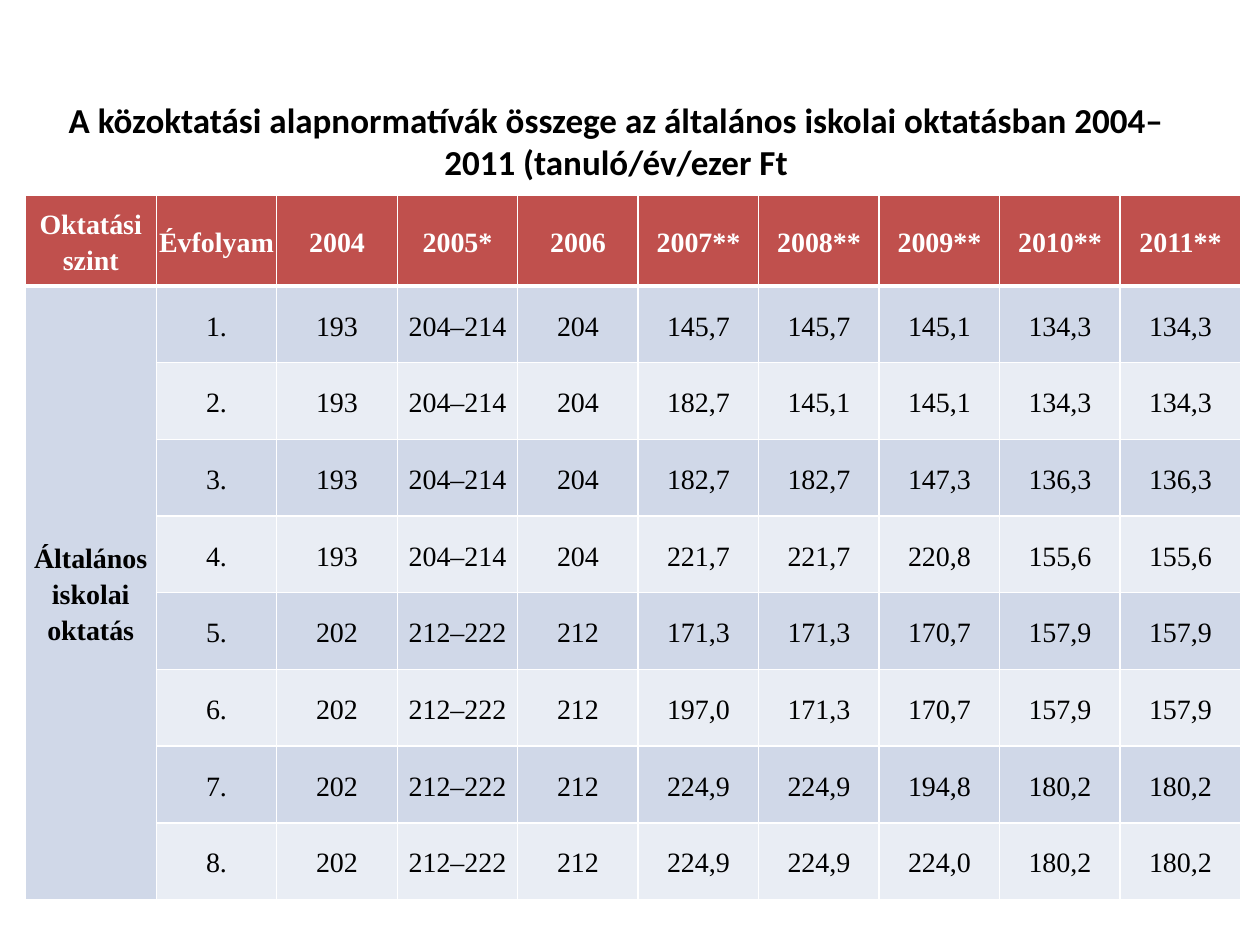
from dataclasses import dataclass

from lxml.etree import SubElement as Sub
from pptx import Presentation
from pptx.dml.color import RGBColor
from pptx.enum.text import MSO_ANCHOR as Anchor, PP_ALIGN as Align
from pptx.oxml.ns import qn
from pptx.table import _Cell as Cell
from pptx.text.text import _Paragraph as Para
from pptx.util import Pt

WHITE = RGBColor(0xFF, 0xFF, 0xFF)
BLACK = RGBColor(0, 0, 0)
RED = RGBColor(0xC0, 0x50, 0x4D)
BLUE = RGBColor(0xD0, 0xD8, 0xE8)
PALE = RGBColor(0xE9, 0xED, 0xF4)

TITLE = "A közoktatási alapnormatívák összege az általános iskolai oktatásban 2004–2011 (tanuló/év/ezer Ft"
HEADS = ["Oktatási szint", "Évfolyam", "2004", "2005*", "2006",
         "2007**", "2008**", "2009**", "2010**", "2011**"]
LEVEL = "Általános iskolai oktatás"
LOWER = ["193", "204–214", "204"]
UPPER = ["202", "212–222", "212"]
SUMS = [
    ["145,7", "145,7", "145,1", "134,3", "134,3"],
    ["182,7", "145,1", "145,1", "134,3", "134,3"],
    ["182,7", "182,7", "147,3", "136,3", "136,3"],
    ["221,7", "221,7", "220,8", "155,6", "155,6"],
    ["171,3", "171,3", "170,7", "157,9", "157,9"],
    ["197,0", "171,3", "170,7", "157,9", "157,9"],
    ["224,9", "224,9", "194,8", "180,2", "180,2"],
    ["224,9", "224,9", "224,0", "180,2", "180,2"],
]
LEFT, TOP, WIDTH = 14.4, 111.6, 694.8
FIRST, HEAD, ROW = 74.9, 51.8, 43.83


@dataclass
class Style:
    fill: RGBColor
    ink: RGBColor
    bold: bool
    over: float = 1
    under: float = 1


def set_all(item: object, values: dict) -> None:
    for name, value in values.items():
        setattr(item, name, value)


def set_font(para: Para, face: str, size: float, ink: RGBColor, bold: bool) -> None:
    para.alignment = Align.CENTER
    set_all(para.font, {"name": face, "size": Pt(size), "bold": bold})
    para.font.color.rgb = ink


def add_edge(cell: Cell, side: str, width: float) -> None:
    line = Sub(cell._tc.get_or_add_tcPr(), qn(f"a:ln{side}"), w=str(Pt(width)))
    Sub(Sub(line, qn("a:solidFill")), qn("a:srgbClr"), val=str(WHITE))


def draw_cell(cell: Cell, text: str, style: Style) -> None:
    edges = {"L": 1, "R": 1, "T": style.over, "B": style.under}
    for side, width in edges.items():
        add_edge(cell, side, width)
    cell.fill.solid()
    cell.fill.fore_color.rgb = style.fill
    sides = ("left", "right", "top", "bottom")
    set_all(cell, {f"margin_{side}": Pt(0.7) for side in sides})
    set_all(cell, {"vertical_anchor": Anchor.MIDDLE, "text": text})
    para = cell.text_frame.paragraphs[0]
    para.line_spacing = 1.15
    set_font(para, "Times New Roman", 16, style.ink, style.bold)


def pick_style(row: int, col: int) -> Style:
    if row == 0:
        return Style(RED, WHITE, True, under=3)
    fill = BLUE if row % 2 or col == 0 else PALE
    return Style(fill, BLACK, col == 0, over=3 if row == 1 else 1)


def main() -> None:
    deck = Presentation()
    set_all(deck, {"slide_width": Pt(720), "slide_height": Pt(540)})
    slide = deck.slides.add_slide(deck.slide_layouts[5])

    title = slide.shapes.title
    set_all(title, {"left": Pt(20.2), "top": Pt(49), "width": Pt(663.8), "height": Pt(62.6)})
    set_all(title.text_frame, {"text": TITLE, "word_wrap": True, "vertical_anchor": Anchor.MIDDLE})
    set_font(title.text_frame.paragraphs[0], "Calibri", 20, BLACK, True)

    rows = [HEADS]
    for grade, sums in enumerate(SUMS, 1):
        level = LEVEL if grade == 1 else ""
        rows.append([level, f"{grade}.", *(LOWER if grade <= 4 else UPPER), *sums])

    high = HEAD + ROW * len(SUMS)
    frame = slide.shapes.add_table(
        len(rows), len(HEADS), Pt(LEFT), Pt(TOP), Pt(WIDTH), Pt(high))
    table = frame.table
    for at, col in enumerate(table.columns):
        col.width = Pt(FIRST if at == 0 else (WIDTH - FIRST) / (len(HEADS) - 1))
    for at, row in enumerate(table.rows):
        row.height = Pt(HEAD if at == 0 else ROW)
    for at, row in enumerate(rows):
        for col, text in enumerate(row):
            draw_cell(table.cell(at, col), text, pick_style(at, col))
    table.cell(1, 0).merge(table.cell(len(SUMS), 0))

    deck.save("out.pptx")


if __name__ == "__main__":
    main()
